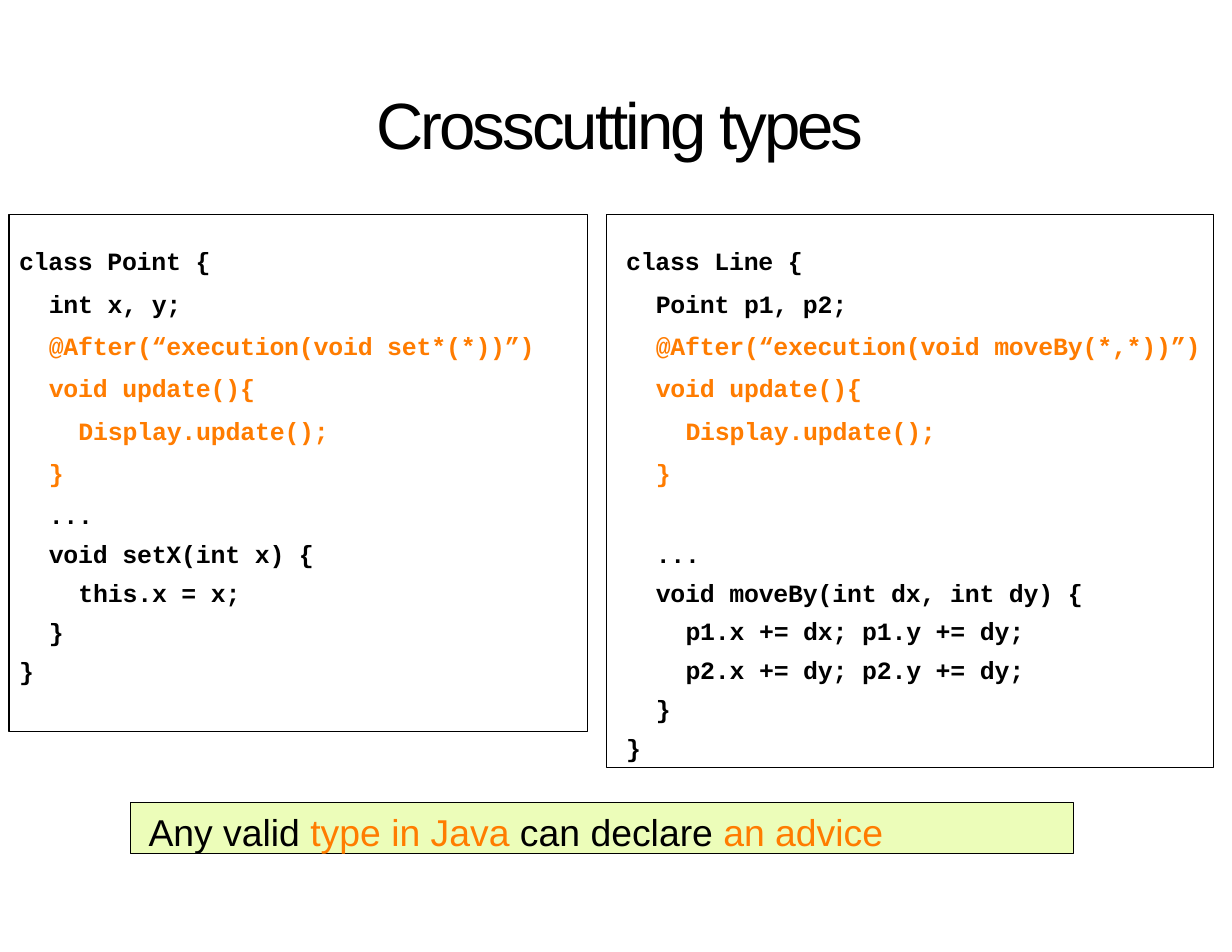
from pptx import Presentation
from pptx.dml.color import RGBColor
from pptx.enum.shapes import MSO_SHAPE
from pptx.enum.text import MSO_ANCHOR, PP_ALIGN
from pptx.util import Pt

RECTANGLE = MSO_SHAPE.RECTANGLE
TOP = MSO_ANCHOR.TOP
LEFT, CENTER = PP_ALIGN.LEFT, PP_ALIGN.CENTER
BLACK = RGBColor(0x00, 0x00, 0x00)
ORANGE = RGBColor(0xFF, 0x7C, 0x00)
LIME = RGBColor(0xEC, 0xFD, 0xB9)

TITLE = "Crosscutting types"

# Line spacing and space before, in points
DECLARATION = (1.25, 3.2)
BODY = (1.3, 0)
CLOSING = (1.0, 5.8)
AFTER_GAP = (1.0, 32.9)

# Code lines: indent level, text, colour, spacing
ADVICE_BODY = [
    (1, "void update(){", ORANGE, DECLARATION),
    (2, "Display.update();", ORANGE, DECLARATION),
    (1, "}", ORANGE, DECLARATION),
]
CLOSING_BRACES = [(1, "}", BLACK, CLOSING), (0, "}", BLACK, CLOSING)]

POINT_CODE = [
    (0, "class Point {", BLACK, DECLARATION),
    (1, "int x, y;", BLACK, DECLARATION),
    (1, "@After(“execution(void set*(*))”)", ORANGE, DECLARATION),
    *ADVICE_BODY,
    (1, "...", BLACK, DECLARATION),
    (1, "void setX(int x) {", BLACK, BODY),
    (2, "this.x = x;", BLACK, BODY),
    *CLOSING_BRACES,
]
LINE_CODE = [
    (0, "class Line {", BLACK, DECLARATION),
    (1, "Point p1, p2;", BLACK, DECLARATION),
    (1, "@After(“execution(void moveBy(*,*))”)", ORANGE, DECLARATION),
    *ADVICE_BODY,
    (1, "...", BLACK, AFTER_GAP),
    (1, "void moveBy(int dx, int dy) {", BLACK, BODY),
    (2, "p1.x += dx; p1.y += dy;", BLACK, BODY),
    (2, "p2.x += dy; p2.y += dy;", BLACK, BODY),
    *CLOSING_BRACES,
]
SUMMARY = [
    ("Any valid ", BLACK),
    ("type in Java ", ORANGE),
    ("can declare ", BLACK),
    ("an advice", ORANGE),
]

# Panels: code, frame left, frame width, frame height, text left
PANELS = [
    (POINT_CODE, 5.76, 372, 332.5, 5.76),
    (LINE_CODE, 390, 390, 355.5, 396),
]
PANEL_TOP = 138
CODE_TOP = 150.5
CODE_MARGIN = 6.5
LEVEL_INDENT = 19.1


def prepare_frame(shape, inset_top=0, wrap=True):
    frame = shape.text_frame
    frame.margin_left = frame.margin_right = frame.margin_bottom = 0
    frame.margin_top = Pt(inset_top)
    frame.vertical_anchor = TOP
    frame.word_wrap = wrap
    return frame


def add_text(paragraph, text, *, font, size, color=BLACK, bold=False, tracking=0):
    """Add a run; tracking is the letter spacing in points."""
    run = paragraph.add_run()
    run.text = text
    run.font.name = font
    run.font.size = Pt(size)
    run.font.bold = bold
    run.font.color.rgb = color
    run._r.get_or_add_rPr().set("spc", str(round(tracking * 100)))


def format_paragraph(paragraph, *, line_spacing=1.0, before=0, indent=0, align=LEFT):
    paragraph.alignment = align
    paragraph.line_spacing = line_spacing
    paragraph.space_before = Pt(before)
    properties = paragraph._p.get_or_add_pPr()
    properties.set("marL", str(Pt(indent)))
    properties.set("indent", "0")


def add_rectangle(slide, left, top, width, height, fill=None):
    shape = slide.shapes.add_shape(RECTANGLE, Pt(left), Pt(top), Pt(width), Pt(height))
    shape.shadow.inherit = False
    if fill is None:
        shape.fill.background()
    else:
        shape.fill.solid()
        shape.fill.fore_color.rgb = fill
    shape.line.color.rgb = BLACK
    shape.line.width = Pt(0.75)
    return shape


def add_code(slide, lines, left, width, height):
    box = slide.shapes.add_textbox(Pt(left), Pt(CODE_TOP), Pt(width), Pt(height))
    frame = prepare_frame(box, inset_top=2.9, wrap=False)
    for index, (level, text, color, (spacing, before)) in enumerate(lines):
        paragraph = frame.add_paragraph() if index else frame.paragraphs[0]
        format_paragraph(paragraph, line_spacing=spacing, before=before,
                         indent=CODE_MARGIN + level * LEVEL_INDENT)
        add_text(paragraph, text, font="Courier New", size=16, color=color,
                 bold=True, tracking=-0.1)


def main():
    presentation = Presentation()
    presentation.slide_width, presentation.slide_height = Pt(792), Pt(612)
    slide = presentation.slides.add_slide(presentation.slide_layouts[5])

    title = slide.shapes.title
    title.left, title.top, title.width, title.height = Pt(126), Pt(54), Pt(545), Pt(51)
    paragraph = prepare_frame(title).paragraphs[0]
    format_paragraph(paragraph, align=CENTER)
    add_text(paragraph, TITLE, font="Arial", size=42, tracking=-1.9)

    for code, left, width, height, text_left in PANELS:
        add_rectangle(slide, left, PANEL_TOP, width, height)
        add_code(slide, code, text_left, left + width - text_left,
                 PANEL_TOP + height - CODE_TOP)

    banner = add_rectangle(slide, 84, 516, 606, 33, fill=LIME)
    paragraph = prepare_frame(banner, inset_top=5).paragraphs[0]
    format_paragraph(paragraph, line_spacing=Pt(28), before=4.8, indent=11.5)
    for text, color in SUMMARY:
        add_text(paragraph, text, font="Arial", size=24, color=color)

    presentation.save("out.pptx")


if __name__ == "__main__":
    main()
